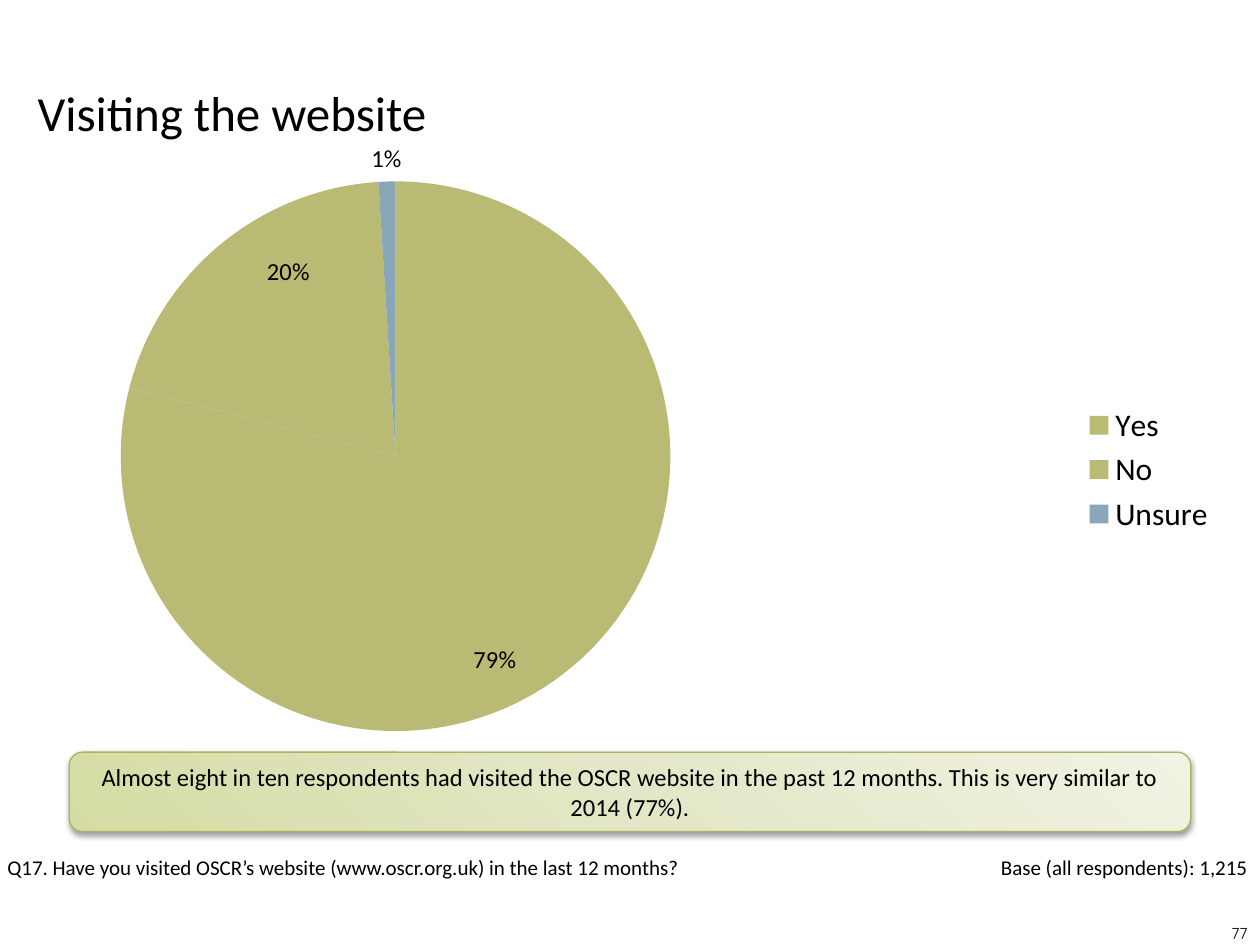
from lxml import etree
from pptx import Presentation
from pptx.chart.data import CategoryChartData
from pptx.dml.color import RGBColor
from pptx.enum.chart import XL_CHART_TYPE as ChartType
from pptx.enum.chart import XL_LABEL_POSITION as LabelPos
from pptx.enum.chart import XL_LEGEND_POSITION as LegendPos
from pptx.enum.shapes import MSO_SHAPE as Shape
from pptx.enum.text import MSO_ANCHOR as Anchor
from pptx.enum.text import PP_ALIGN as Align
from pptx.oxml import parse_xml
from pptx.oxml.ns import nsdecls, qn
from pptx.util import Inches, Pt

WIDTH, HEIGHT = 10, 7.5
BODY_FONT = "Calibri"
ANSWERS = [
    ("Yes", 0.79, "B9BA74", LabelPos.INSIDE_END, (-0.036, 0.012)),
    ("No", 0.2, "B9BA74", LabelPos.INSIDE_END, (0.035, 0.01)),
    ("Unsure", 0.01, "8AA7B9", LabelPos.OUTSIDE_END, None),
]


def color(value):
    """Turn a hex string into a colour."""
    return RGBColor.from_string(value)


def share(left, top, width, height):
    """Turn shares of the slide into a box of lengths."""
    return (Inches(left * WIDTH), Inches(top * HEIGHT),
            Inches(width * WIDTH), Inches(height * HEIGHT))


def style_font(font, size, name=BODY_FONT):
    """Set a black font of the given size."""
    font.size, font.name = Pt(size), name
    font.color.rgb = color("000000")


def write(frame, wording, size, align=Align.LEFT, anchor=Anchor.TOP, name=BODY_FONT):
    """Put one wrapped paragraph into a text frame."""
    frame.word_wrap = True
    frame.vertical_anchor = anchor
    paragraph = frame.paragraphs[0]
    paragraph.text = wording
    paragraph.alignment = align
    style_font(paragraph.runs[0].font, size, name)


def add_caption(slide, box, *wording, **style):
    """Add a text box with a single paragraph."""
    write(slide.shapes.add_textbox(*box).text_frame, *wording, **style)


def set_layout(parent, index, **places):
    """Insert a manual chart layout into an element."""
    layout = parse_xml(f'<c:layout {nsdecls("c")}><c:manualLayout/></c:layout>')
    for tag, value in places.items():
        etree.SubElement(layout[0], qn(f"c:{tag}")).set("val", str(value))
    for old in parent.findall(qn("c:layout")):
        parent.remove(old)
    parent.insert(index, layout)


def add_answer_pie(slide, box):
    """Add the pie of answers with its legend."""
    data = CategoryChartData(number_format="0%")
    data.categories = [answer[0] for answer in ANSWERS]
    data.add_series("Series 1", [answer[1] for answer in ANSWERS])
    chart = slide.shapes.add_chart(ChartType.PIE, *box, data).chart
    style_font(chart.font, 18)
    chart.has_title = False
    chart.has_legend = True
    chart.legend.position = LegendPos.RIGHT
    chart.legend.include_in_layout = False
    plot = chart.plots[0]
    plot.vary_by_categories = True
    series = plot.series[0]
    labels = series.data_labels
    labels.show_value = True
    labels.number_format, labels.number_format_is_linked = "0%", False
    labels.position = LabelPos.OUTSIDE_END
    style_font(labels.font, 14)
    for index, (_, _, fill, position, shift) in enumerate(ANSWERS):
        point = series.points[index]
        point.format.fill.solid()
        point.format.fill.fore_color.rgb = color(fill)
        style_font(point.data_label.font, 14)
        point.data_label.position = position
        if shift:
            label = labels._element.findall(qn("c:dLbl"))[index]
            set_layout(label, 1, x=shift[0], y=shift[1])
    plot_area = chart._chartSpace.chart.plotArea
    set_layout(plot_area, 0, layoutTarget="inner", xMode="edge", yMode="edge",
               x=0.001, y=0.058, w=0.602, h=0.843)


def add_finding(slide, box, wording):
    """Add the rounded panel that sums up the answers."""
    panel = slide.shapes.add_shape(Shape.ROUNDED_RECTANGLE, *box)
    panel.fill.gradient()
    panel.fill.gradient_angle = 45
    stops = panel._element.spPr.find(qn("a:gradFill")).find(qn("a:gsLst"))
    for stop in list(stops):
        stops.remove(stop)
    for place, tint in ((0, "D5DCA3"), (50, "E3E7C7"), (100, "F1F3E3")):
        stops.append(parse_xml(
            f'<a:gs {nsdecls("a")} pos="{place * 1000}"><a:srgbClr val="{tint}"/></a:gs>'))
    panel.line.color.rgb = color("AAB362")
    panel.line.width = Pt(0.75)
    panel.shadow.inherit = False
    panel._element.spPr.find(qn("a:effectLst")).append(parse_xml(
        f'<a:outerShdw {nsdecls("a")} blurRad="{Pt(3.1)}" dist="{Pt(1.6)}" dir="5400000" '
        'rotWithShape="0"><a:srgbClr val="000000"><a:alpha val="38000"/></a:srgbClr>'
        '</a:outerShdw>'))
    write(panel.text_frame, wording, 14, Align.CENTER, Anchor.MIDDLE)


def add_footer(slide, left, top, width, height):
    """Add the question, the base and the page number at the foot."""
    row = height * 0.4
    add_caption(slide, share(left - 0.004, top, width * 0.807, row),
                "Q17. Have you visited OSCR’s website (www.oscr.org.uk) in the last 12 months?", 12)
    add_caption(slide, share(left + width * 0.149, top, width * 0.851, row),
                "Base (all respondents): 1,215", 12, align=Align.RIGHT)
    add_caption(slide, share(left + width * 0.767, top + height * 0.61, width * 0.233, height * 0.53),
                "77", 9, align=Align.RIGHT, anchor=Anchor.MIDDLE, name="Quicksand")


def main():
    """Build the slide and save it."""
    deck = Presentation()
    deck.slide_width, deck.slide_height = Inches(WIDTH), Inches(HEIGHT)
    slide = deck.slides.add_slide(deck.slide_layouts[6])
    add_answer_pie(slide, share(0.028, 0.152, 0.947, 0.69))
    add_caption(slide, share(0.02, 0.04, 0.717, 0.157), "Visiting the website", 28,
                anchor=Anchor.MIDDLE)
    add_finding(slide, share(0.055, 0.796, 0.89, 0.084),
                "Almost eight in ten respondents had visited the OSCR website in the past "
                "12 months. This is very similar to 2014 (77%).")
    add_footer(slide, 0, 0.898, 1, 0.102)
    deck.save("out.pptx")


if __name__ == "__main__":
    main()
